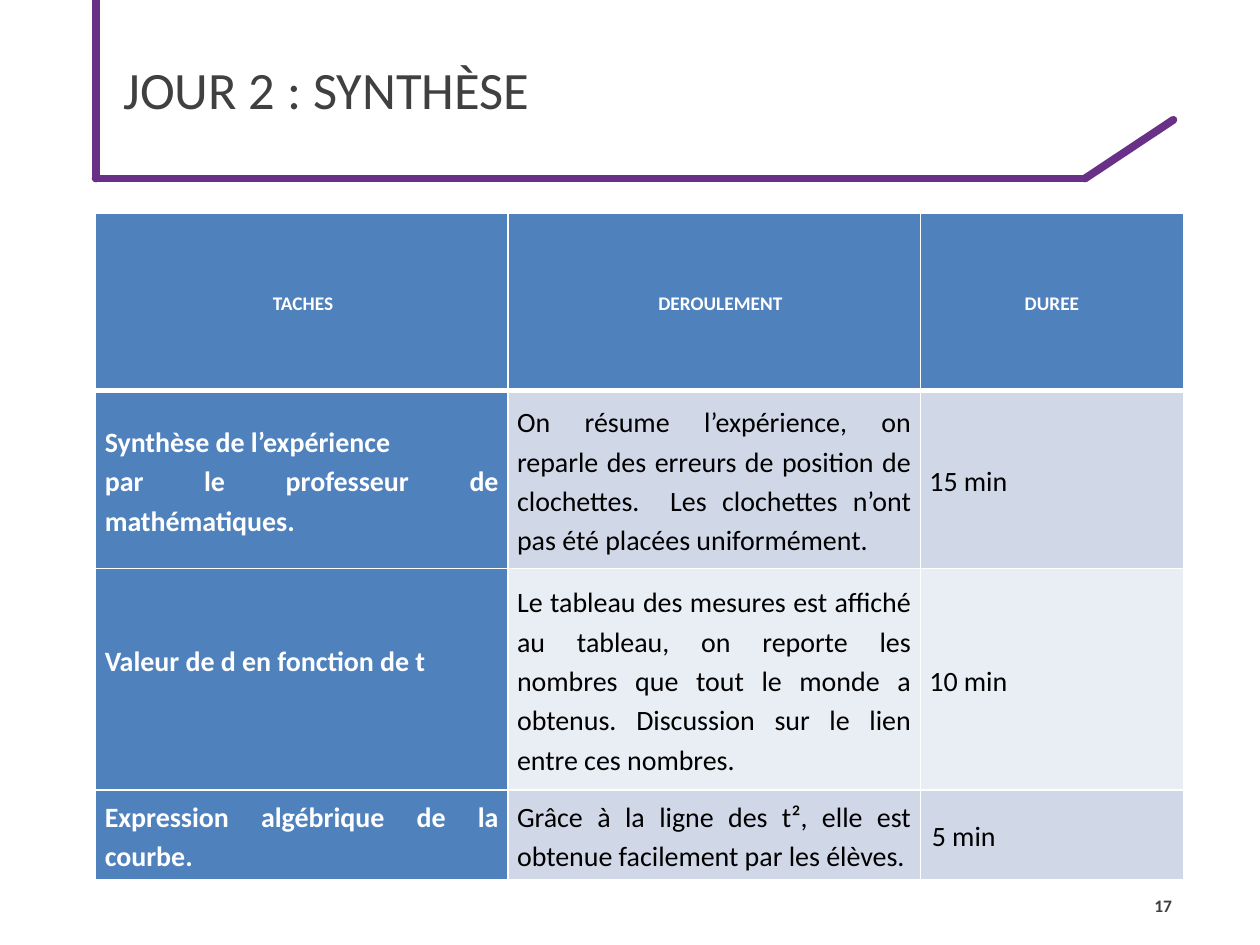
from lxml import etree
from pptx import Presentation
from pptx import util as u
from pptx.dml.color import RGBColor
from pptx.enum import shapes, text
from pptx.oxml.ns import qn

Pt = u.Pt
LEFT, BASE = 54.7, 102
BLUE, WHITE, BLACK, GREY = "4F81BD", "FFFFFF", "000000", "404040"
BANDS = ["D0D8E8", "E9EDF4"]
WIDTHS = [235.6, 235.6, 150.5]
HEIGHTS = [101.6, 101.6, 126.7, 51]
ROWS = [
    ["TACHES", "DEROULEMENT", "DUREE"],
    ["Synthèse de l’expérience\npar le professeur de mathématiques.",
     "On résume l’expérience, on reparle des erreurs de position de "
     "clochettes.  Les clochettes n’ont pas été placées uniformément.",
     "15 min"],
    ["Valeur de d en fonction de t",
     "Le tableau des mesures est affiché au tableau, on reporte les nombres "
     "que tout le monde a obtenus. Discussion sur le lien entre ces nombres.",
     "10 min"],
    ["Expression algébrique de la courbe.",
     "Grâce à la ligne des t², elle est obtenue facilement par les élèves.",
     "5 min"],
]
INDENTS = {(0, 0): 1.4, (0, 1): 7.2, (3, 2): 1.4}
ALIGN = text.PP_ALIGN


def tint(hue):
    return RGBColor.from_string(hue)


def style(frame, size, hue, bold=False, align=ALIGN.LEFT):
    for para in frame.paragraphs:
        para.alignment = align
        for run in para.runs:
            font = run.font
            font.name, font.size, font.bold = "Calibri", Pt(size), bold
            font.color.rgb = tint(hue)


def label(slide, words, box, size, hue, **look):
    frame = slide.shapes.add_textbox(*map(Pt, box)).text_frame
    frame.word_wrap = True
    frame.vertical_anchor = text.MSO_ANCHOR.MIDDLE
    frame.text = words
    style(frame, size, hue, **look)


def stroke(slide, start, end):
    """Draw a thick purple line with round ends and no shadow."""
    line = slide.shapes.add_connector(
        shapes.MSO_CONNECTOR.STRAIGHT, *map(Pt, start + end))
    line.line.color.rgb = tint("683086")
    line.line.width = Pt(4.5)
    line.line._get_or_add_ln().set("cap", "rnd")
    etree.SubElement(line._element.spPr, qn("a:effectLst"))


def edge(cell, low):
    """Give a cell white borders, the bottom one low points wide."""
    props = cell._tc.get_or_add_tcPr()
    sides = [("L", 1), ("R", 1), ("T", 1), ("B", low)]
    for spot, (side, width) in enumerate(sides):
        line = etree.Element(qn("a:ln" + side), w=str(Pt(width)))
        fill = etree.SubElement(line, qn("a:solidFill"))
        etree.SubElement(fill, qn("a:srgbClr"), val=WHITE)
        props.insert(spot, line)


def fill(cell, row, col):
    head = row == 0
    strong = head or col == 0
    cell.text = ROWS[row][col]
    cell.vertical_anchor = text.MSO_ANCHOR.MIDDLE
    cell.margin_left = cell.margin_right = Pt(5.2)
    cell.margin_top = cell.margin_bottom = 0
    cell.fill.solid()
    cell.fill.fore_color.rgb = tint(BLUE if strong else BANDS[(row - 1) % 2])
    edge(cell, 3 if head else 1)
    align = ALIGN.CENTER if head else ALIGN.JUSTIFY
    style(cell.text_frame, 11 if head else 16,
          WHITE if strong else BLACK, strong, align)
    for para in cell.text_frame.paragraphs:
        para.line_spacing = 1.15
        if (row, col) in INDENTS:
            para._p.get_or_add_pPr().set("marL", str(Pt(INDENTS[row, col])))


def grid(slide):
    frame = slide.shapes.add_table(
        len(ROWS), len(WIDTHS), Pt(LEFT), Pt(121.7),
        Pt(sum(WIDTHS)), Pt(sum(HEIGHTS)))
    table = frame.table
    for col, width in zip(table.columns, WIDTHS):
        col.width = Pt(width)
    for row, height in zip(table.rows, HEIGHTS):
        row.height = Pt(height)
    for row in range(len(ROWS)):
        for col in range(len(WIDTHS)):
            fill(table.cell(row, col), row, col)
    # The second task sits one line above the middle of its row.
    table.cell(2, 0).margin_bottom = Pt(22.4)


def main():
    deck = Presentation()
    deck.slide_width, deck.slide_height = Pt(720), Pt(540)
    slide = deck.slides.add_slide(deck.slide_layouts[6])
    bend = (620, BASE)
    stroke(slide, (LEFT, BASE), bend)
    stroke(slide, bend, (670.5, 68.5))
    stroke(slide, (LEFT, BASE), (LEFT, 0))
    label(slide, "JOUR 2 : SYNTHÈSE", (63.4, 0, 620.6, 101.5), 30, GREY)
    grid(slide)
    label(slide, "17", (641.5, 503.3, 35.3, 28.8), 10, GREY,
          bold=True, align=ALIGN.RIGHT)
    deck.save("out.pptx")


if __name__ == "__main__":
    main()
